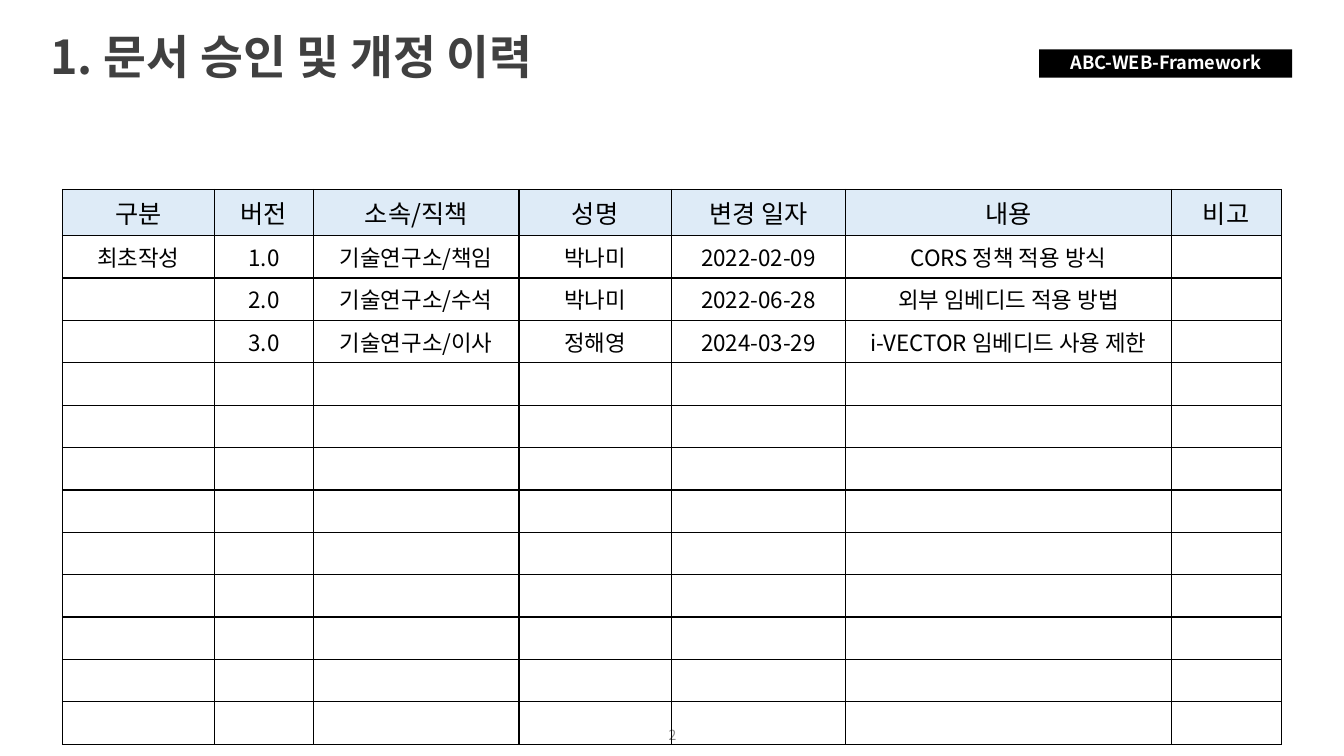
from lxml.etree import SubElement
from pptx import Presentation
from pptx.dml.color import RGBColor
from pptx.enum.shapes import MSO_SHAPE
from pptx.enum.text import MSO_ANCHOR, PP_ALIGN
from pptx.oxml.ns import qn
from pptx.util import Pt

FONT = "Noto Sans CJK KR"
COLUMN_WIDTHS = [108.7, 70.6, 146.9, 108.7, 124.6, 232.6, 78.5]
HEADER_HEIGHT, ROW_HEIGHT, EMPTY_ROWS = 32.9, 30.3, 9
HISTORY = [
    ["구분", "버전", "소속/직책", "성명", "변경 일자", "내용", "비고"],
    ["최초작성", "1.0", "기술연구소/책임", "박나미", "2022-02-09", "CORS 정책 적용 방식", ""],
    ["", "2.0", "기술연구소/수석", "박나미", "2022-06-28", "외부 임베디드 적용 방법", ""],
    ["", "3.0", "기술연구소/이사", "정해영", "2024-03-29", "i-VECTOR 임베디드 사용 제한", ""],
]


def color(value):
    """Turn a hex string into a colour."""
    return RGBColor.from_string(value)


def apply(target, values):
    """Set each named attribute on the target."""
    for name, value in values.items():
        setattr(target, name, value)


def write(frame, text, size, ink, bold=False, **layout):
    """Write one formatted paragraph into a text frame."""
    para = frame.paragraphs[0]
    apply(para, layout)
    span = para.add_run()
    span.text = text
    apply(span.font, {"name": FONT, "size": Pt(size), "bold": bold})
    span.font.color.rgb = color(ink)
    SubElement(span._r.get_or_add_rPr(), qn("a:ea")).set("typeface", FONT)


def add_text(page, box, text, size, ink, frame_values, **layout):
    """Place a wrapped text box in the given box."""
    frame = page.shapes.add_textbox(*map(Pt, box)).text_frame
    apply(frame, {"word_wrap": True, **frame_values})
    write(frame, text, size, ink, **layout)


def add_badge(page, box, text):
    """Place the black product badge."""
    badge = page.shapes.add_shape(MSO_SHAPE.RECTANGLE, *map(Pt, box))
    badge.shadow.inherit = False
    badge.fill.solid()
    badge.fill.fore_color.rgb = color("000000")
    badge.line.fill.background()
    apply(badge.text_frame, {"word_wrap": True, "margin_top": Pt(3.6), "margin_bottom": Pt(2.9)})
    write(badge.text_frame, text, 13, "FFFFFF", True, alignment=PP_ALIGN.CENTER, line_spacing=0.9)


def add_borders(cell):
    """Draw thin black lines on all four sides of a cell."""
    properties = cell._tc.get_or_add_tcPr()
    for index, side in enumerate(["lnL", "lnR", "lnT", "lnB"]):
        line = properties.makeelement(qn(f"a:{side}"), {"w": str(Pt(1))})
        fill = SubElement(line, qn("a:solidFill"))
        SubElement(fill, qn("a:srgbClr")).set("val", "000000")
        properties.insert(index, line)


def add_history(page, left, top):
    """Place the revision table with its header, entries and empty rows."""
    row_count = len(HISTORY) + EMPTY_ROWS
    heights = [HEADER_HEIGHT] + [ROW_HEIGHT] * (row_count - 1)
    box = left, top, sum(COLUMN_WIDTHS), sum(heights)
    table = page.shapes.add_table(row_count, len(COLUMN_WIDTHS), *map(Pt, box)).table
    apply(table, {"first_row": False, "horz_banding": False})
    for column, width in zip(table.columns, COLUMN_WIDTHS):
        column.width = Pt(width)
    entries = HISTORY + [[""] * len(COLUMN_WIDTHS)] * EMPTY_ROWS
    for index, (row, height, texts) in enumerate(zip(table.rows, heights, entries)):
        row.height = Pt(height)
        for cell, text in zip(row.cells, texts):
            apply(cell, {"margin_top": 0, "margin_bottom": 0, "vertical_anchor": MSO_ANCHOR.MIDDLE})
            if index == 0:
                cell.fill.solid()
                cell.fill.fore_color.rgb = color("DEEBF7")
            else:
                cell.fill.background()
            add_borders(cell)
            if text:
                write(cell.text_frame, text, 16 if index else 18, "000000", alignment=PP_ALIGN.CENTER)


def main():
    """Build and save the revision history slide."""
    deck = Presentation()
    apply(deck, {"slide_width": Pt(960), "slide_height": Pt(540)})
    page = deck.slides.add_slide(deck.slide_layouts[6])
    add_text(page, (36, 27.4, 879, 38.9), "1. 문서 승인 및 개정 이력", 33.3, "404040",
             {"margin_left": 0}, bold=True, line_spacing=0.7)
    add_text(page, (451.4, 515.5, 38.9, 19.4), "2", 10, "8C8C8C",
             {"vertical_anchor": MSO_ANCHOR.MIDDLE}, alignment=PP_ALIGN.RIGHT)
    add_badge(page, (742.3, 35.3, 180.7, 20.2), "ABC-WEB-Framework")
    add_history(page, 44.6, 135.4)
    deck.save("out.pptx")


if __name__ == "__main__":
    main()
